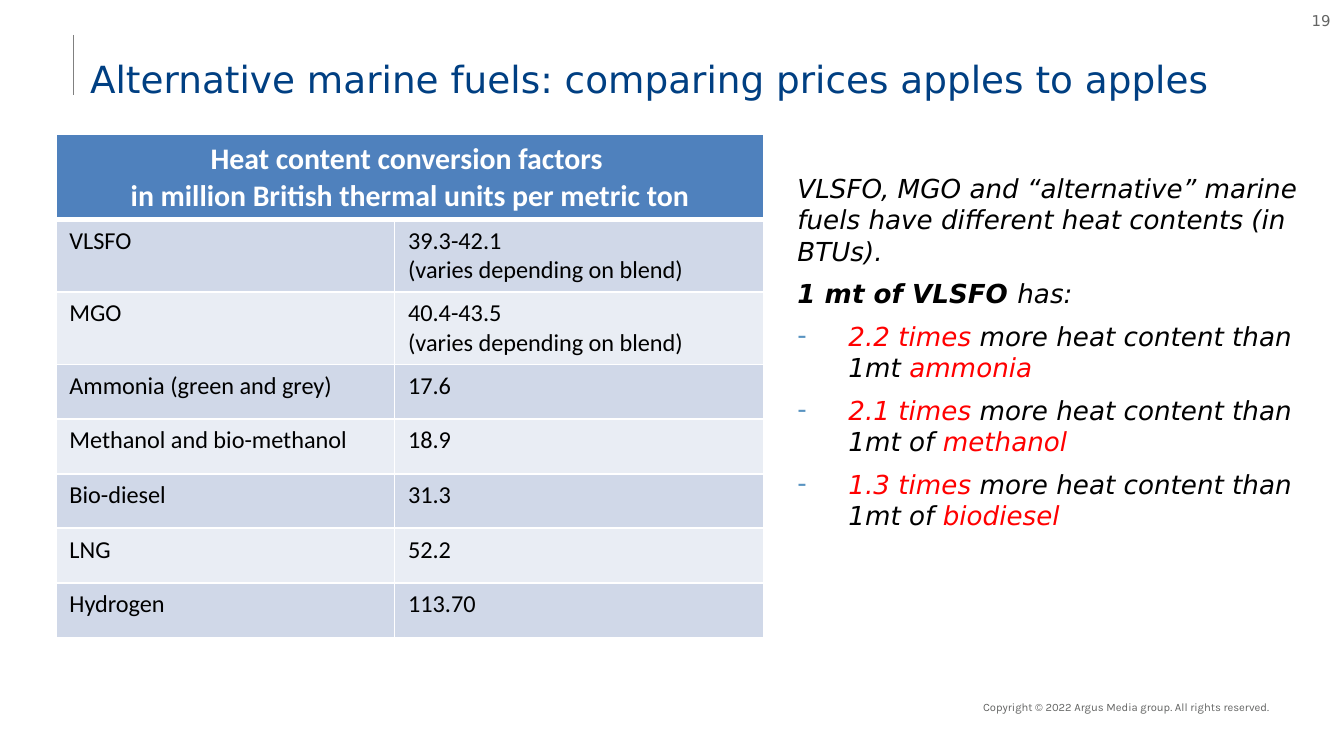
from collections import namedtuple

from lxml.etree import SubElement as add_element
from pptx import Presentation
from pptx.dml.color import RGBColor as Rgb
from pptx.enum.shapes import MSO_CONNECTOR as Connector
from pptx.enum.text import MSO_ANCHOR as Anchor, PP_ALIGN as Align
from pptx.oxml.ns import qn
from pptx.util import Inches, Pt

Box = namedtuple("Box", "left top width height")

COLORS = {
    "title": "003F82", "rule": "808080", "small": "636463", "text": "000000",
    "accent": "FF0000", "bullet": "5893C1", "white": "FFFFFF",
    "header": "4F81BD", "odd": "D0D8E8", "even": "E9EDF4",
}
SANS, TABLE_FONT, FOOTER_FONT = "DejaVu Sans", "Calibri", "Karla"
BLEND_NOTE = "(varies depending on blend)"
TABLE_TITLE = ["Heat content conversion factors ",
               "in million British thermal units per metric ton"]
FUELS = [
    ("VLSFO", ["39.3-42.1", BLEND_NOTE]),
    ("MGO", ["40.4-43.5", BLEND_NOTE]),
    ("Ammonia (green and grey)", ["17.6"]),
    ("Methanol and bio-methanol", ["18.9"]),
    ("Bio-diesel", ["31.3"]),
    ("LNG", ["52.2"]),
    ("Hydrogen", ["113.70"]),
]
COMPARISONS = [("2.2", "1mt ", "ammonia"), ("2.1", "1mt of ", "methanol"),
               ("1.3", "1mt of ", "biodiesel")]


def grid(units):
    return Inches(units / 10)


def place(box):
    return [grid(units) for units in box]


def add_span(para, text, font=SANS, size=14, color="text", bold=False, italic=False):
    span = para.add_run()
    span.text = text
    span.font.name, span.font.size = font, Pt(size)
    span.font.bold, span.font.italic = bold, italic
    span.font.color.rgb = Rgb.from_string(COLORS[color])


def next_para(frame):
    first = frame.paragraphs[0]
    return frame.add_paragraph() if first.runs else first


def add_lines(frame, lines, align=Align.LEFT, **style):
    for line in lines:
        para = next_para(frame)
        para.alignment = align
        add_span(para, line, **style)


def add_frame(page, box, anchor=Anchor.TOP, inset=True):
    frame = page.shapes.add_textbox(*place(box)).text_frame
    frame.word_wrap = True
    frame.vertical_anchor = anchor
    if not inset:
        frame.margin_left = frame.margin_right = 0
        frame.margin_top = frame.margin_bottom = 0
    return frame


def add_title(page, box):
    left = grid(box.left)
    rule = page.shapes.add_connector(
        Connector.STRAIGHT, left, grid(box.top), left, grid(box.top + 4.45))
    rule.line.color.rgb = Rgb.from_string(COLORS["rule"])
    rule.line.width = Pt(0.75)
    add_element(rule._element.spPr, qn("a:effectLst"))
    text_box = Box(box.left + 1.25, box.top - 0.1, box.width - 1.25, box.height)
    add_lines(add_frame(page, text_box, Anchor.BOTTOM, inset=False),
              ["Alternative marine fuels: comparing prices apples to apples"],
              size=20, color="title")


def add_small_print(page, box, text, font, size):
    add_lines(add_frame(page, box, Anchor.MIDDLE), [text], Align.RIGHT,
              font=font, size=size, color="small")


def set_borders(cell, bottom=1):
    properties = cell._tc.get_or_add_tcPr()
    widths = {"lnL": 1, "lnR": 1, "lnT": 1, "lnB": bottom}
    for position, (side, width) in enumerate(widths.items()):
        border = properties.makeelement(qn(f"a:{side}"), {"w": str(Pt(width))})
        fill = add_element(border, qn("a:solidFill"))
        add_element(fill, qn("a:srgbClr"), val=COLORS["white"])
        properties.insert(position, border)


def fill_cell(cell, lines, fill, bottom=1, **style):
    cell.fill.solid()
    cell.fill.fore_color.rgb = Rgb.from_string(COLORS[fill])
    set_borders(cell, bottom)
    add_lines(cell.text_frame, lines, font=TABLE_FONT, **style)


def add_fuel_table(page, box):
    table = page.shapes.add_table(len(FUELS) + 1, 2, *place(box)).table
    name_width = 25.2
    table.columns[0].width = grid(name_width)
    table.columns[1].width = grid(box.width - name_width)
    for row in table.rows:
        row.height = grid(4.06)
    table.rows[0].height = grid(6.3)
    header = table.cell(0, 0)
    header.merge(table.cell(0, 1))
    fill_cell(header, TABLE_TITLE, "header", bottom=3, align=Align.CENTER,
              size=16, color="white", bold=True)
    set_borders(table.cell(0, 1), bottom=3)
    for number, (fuel, values) in enumerate(FUELS, 1):
        if len(values) > 1:
            table.rows[number].height = grid(5.4)
        fill = "odd" if number % 2 else "even"
        fill_cell(table.cell(number, 0), [fuel], fill, size=13)
        fill_cell(table.cell(number, 1), values, fill, size=13)


def add_bullet(para):
    properties = para._p.get_or_add_pPr()
    properties.set("marL", str(Inches(0.38)))
    properties.set("indent", str(Inches(-0.38)))
    color = add_element(properties, qn("a:buClr"))
    add_element(color, qn("a:srgbClr"), val=COLORS["bullet"])
    add_element(properties, qn("a:buFont"), typeface=SANS)
    add_element(properties, qn("a:buChar"), char="-")


def add_comparison(page, box):
    frame = add_frame(page, box)
    add_lines(frame, ["VLSFO, MGO and “alternative” marine fuels have "
                      "different heat contents (in BTUs)."], italic=True)
    lead = next_para(frame)
    add_span(lead, "1 mt of VLSFO ", bold=True, italic=True)
    add_span(lead, "has:", italic=True)
    for factor, amount, fuel in COMPARISONS:
        para = next_para(frame)
        add_bullet(para)
        add_span(para, f"{factor} times ", color="accent", italic=True)
        add_span(para, f"more heat content than {amount}", italic=True)
        add_span(para, fuel, color="accent", italic=True)
    for number, para in enumerate(frame.paragraphs):
        para.space_after = Pt(3)
        if number:
            para.space_before = Pt(3)


def main():
    deck = Presentation()
    deck.slide_width, deck.slide_height = Inches(10), Inches(10 * 9 / 16)
    page = deck.slides.add_slide(deck.slide_layouts[6])
    add_title(page, Box(5.45, 2.6, 88.75, 5))
    add_small_print(page, Box(60.8, 52.1, 34.6, 1),
                    "Copyright © 2022 Argus Media group. All rights reserved.",
                    FOOTER_FONT, 6)
    add_small_print(page, Box(77.5, 0, 22.5, 3), "19", SANS, 8)
    add_comparison(page, Box(58.35, 12.33, 40, 11.7))
    add_fuel_table(page, Box(4.17, 10, 52.7, 37.3))
    deck.save("out.pptx")


if __name__ == "__main__":
    main()
